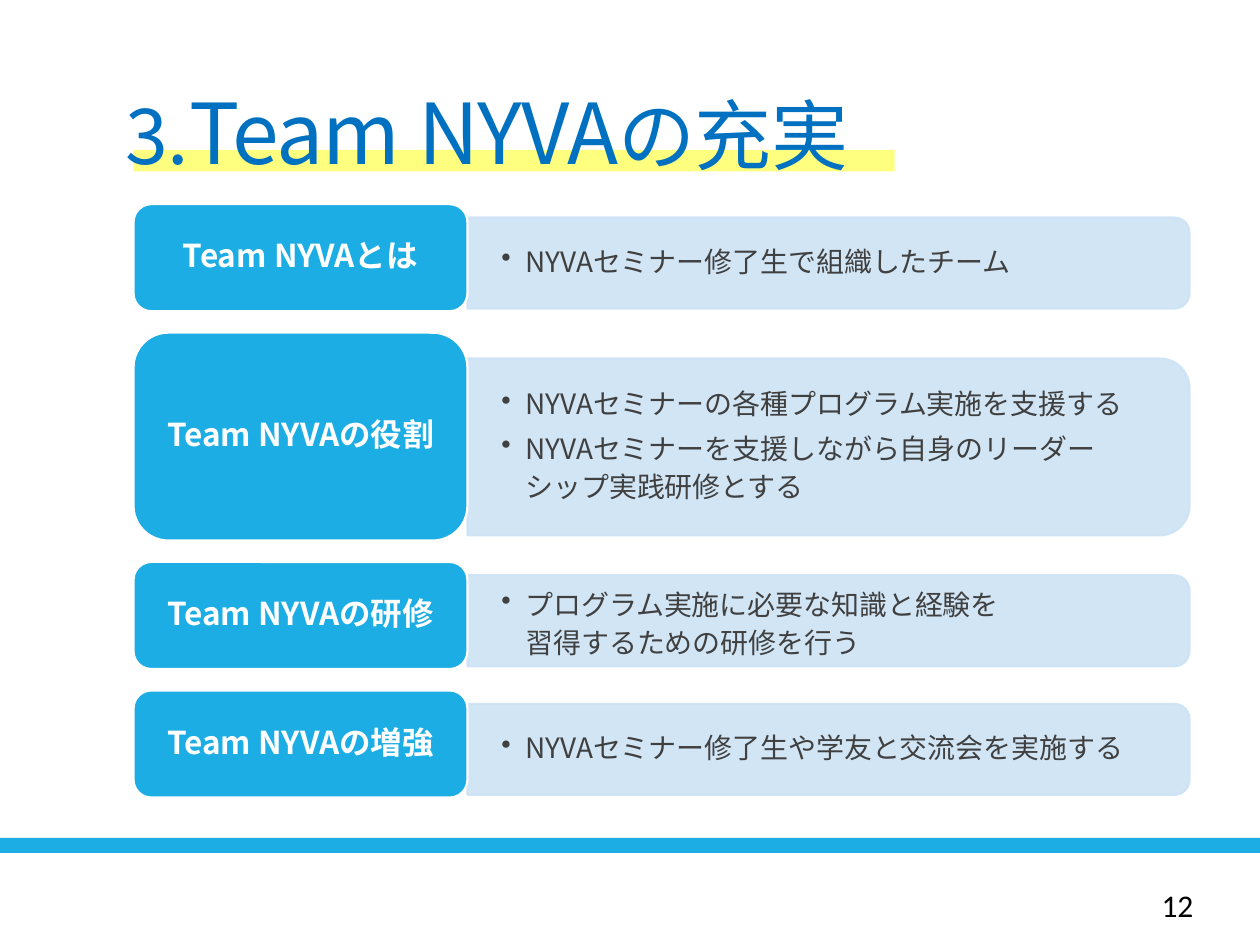
"""Build the Team NYVA slide: a marked title over four labelled rows."""
from lxml.etree import SubElement
from pptx import Presentation
from pptx.dml.color import RGBColor
from pptx.enum.shapes import MSO_SHAPE
from pptx.enum.text import MSO_ANCHOR, PP_ALIGN
from pptx.oxml.ns import qn
from pptx.util import Inches, Pt

THEME = {
    "blue": "1CADE4", "pale": "CDE3F5", "mark": "FFFF00", "title": "0070C0",
    "body": "404040", "white": "FFFFFF", "black": "000000",
    "font": "Noto Sans CJK JP", "digit": "Calibri",
    "big": 48, "head": 44, "label": 18, "text": 16,
}
ROWS = [
    ("Team NYVAとは", 0.85, [("NYVAセミナー修了生で組織したチーム", 0.9)]),
    ("Team NYVAの役割", 1.65, [
        ("NYVAセミナーの各種プログラム実施を支援する", 0.9),
        ("NYVAセミナーを支援しながら自身のリーダーシップ実践研修とする", Pt(22)),
    ]),
    ("Team NYVAの研修", 0.85, [
        ("プログラム実施に必要な知識と経験を\n習得するための研修を行う", Pt(22)),
    ]),
    ("Team NYVAの増強", 0.85, [("NYVAセミナー修了生や学友と交流会を実施する", 0.9)]),
]
LEFT, TOP, GAP = 1.06, 1.62, 0.17
CARD, PANEL = 2.65, 5.73


def paint(shape, color, edge=None, alpha=100):
    shape.shadow.inherit = False
    shape.fill.solid()
    shape.fill.fore_color.rgb = RGBColor.from_string(THEME[color])
    if edge:
        shape.line.width = Pt(1.25)
        shape.line.color.rgb = RGBColor.from_string(THEME[edge])
    else:
        shape.line.fill.background()
    if alpha < 100:
        for tone in shape.element.spPr.iter(qn("a:srgbClr")):
            SubElement(tone, qn("a:alpha")).set("val", str(alpha * 1000))


def write(para, text, size, color, face="font", bold=False):
    for num, part in enumerate(text.split("\n")):
        if num:
            para.add_line_break()
        run = para.add_run()
        run.text = part
        form = {"size": Pt(THEME[size]), "bold": bold, "name": THEME[face]}
        for key, value in form.items():
            setattr(run.font, key, value)
        run.font.color.rgb = RGBColor.from_string(THEME[color])
        props = run.font._element
        SubElement(props, qn("a:ea")).set("typeface", THEME[face])
        if size in ("head", "big"):
            props.set("spc", "-50")


deck = Presentation()
deck.slide_width, deck.slide_height = Inches(10), Inches(7.5)
slide = deck.slides.add_slide(deck.slide_layouts[6])
shapes = slide.shapes

band = shapes.add_shape(MSO_SHAPE.RECTANGLE, 0, Inches(6.65), Inches(10), Inches(0.12))
paint(band, "blue")

page = shapes.add_textbox(Inches(9.04), Inches(6.98), Inches(0.61), Inches(0.4))
para = page.text_frame.paragraphs[0]
para.alignment = PP_ALIGN.CENTER
write(para, "12", "label", "black", "digit")

mark = shapes.add_shape(
    MSO_SHAPE.RECTANGLE, Inches(LEFT), Inches(1.19), Inches(6.04), Inches(0.17))
paint(mark, "mark", alpha=50)

title = shapes.add_textbox(Inches(0.9), Inches(0.31), Inches(8.25), Inches(1.59))
for key, value in {"word_wrap": True, "vertical_anchor": MSO_ANCHOR.MIDDLE}.items():
    setattr(title.text_frame, key, value)
para = title.text_frame.paragraphs[0]
para.line_spacing = 0.85
for text, size in [("3.", "head"), ("Team", "big"), (" ", "head"),
                   ("NYVA", "big"), ("の充実", "head")]:
    write(para, text, size, "title")

inset = {
    "word_wrap": True, "vertical_anchor": MSO_ANCHOR.MIDDLE,
    "margin_left": Inches(0.27), "margin_right": Inches(0.27),
    "margin_top": Inches(0.14), "margin_bottom": Inches(0.14),
}
tight = {key: Inches(0.1) if "margin" in key else value for key, value in inset.items()}
side = LEFT + CARD
top = TOP
for label, high, points in ROWS:
    deep = high * 0.85
    mid = top + high * 0.55
    panel = shapes.add_shape(
        MSO_SHAPE.ROUND_2_SAME_RECTANGLE, Inches(side + (PANEL - deep) / 2),
        Inches(mid - PANEL / 2), Inches(deep), Inches(PANEL))
    panel.rotation = 90
    paint(panel, "pale", "pale", 90)

    box = shapes.add_textbox(
        Inches(side), Inches(mid - deep / 2), Inches(5.68), Inches(deep))
    for key, value in inset.items():
        setattr(box.text_frame, key, value)
    for num, (text, space) in enumerate(points):
        para = box.text_frame.add_paragraph() if num else box.text_frame.paragraphs[0]
        for key, value in {"line_spacing": space, "space_after": Pt(3)}.items():
            setattr(para, key, value)
        props = para._p.get_or_add_pPr()
        props.set("marL", str(Inches(0.19)))
        props.set("indent", str(-Inches(0.19)))
        SubElement(props, qn("a:buChar")).set("char", "•")
        write(para, text, "text", "body")

    card = shapes.add_shape(
        MSO_SHAPE.ROUNDED_RECTANGLE, Inches(LEFT), Inches(top), Inches(CARD), Inches(high))
    paint(card, "blue", "white")
    for key, value in tight.items():
        setattr(card.text_frame, key, value)
    para = card.text_frame.paragraphs[0]
    form = {"alignment": PP_ALIGN.CENTER, "line_spacing": 0.9, "space_after": Pt(6)}
    for key, value in form.items():
        setattr(para, key, value)
    write(para, label, "label", "white", bold=True)
    top += high + GAP

deck.save("out.pptx")
